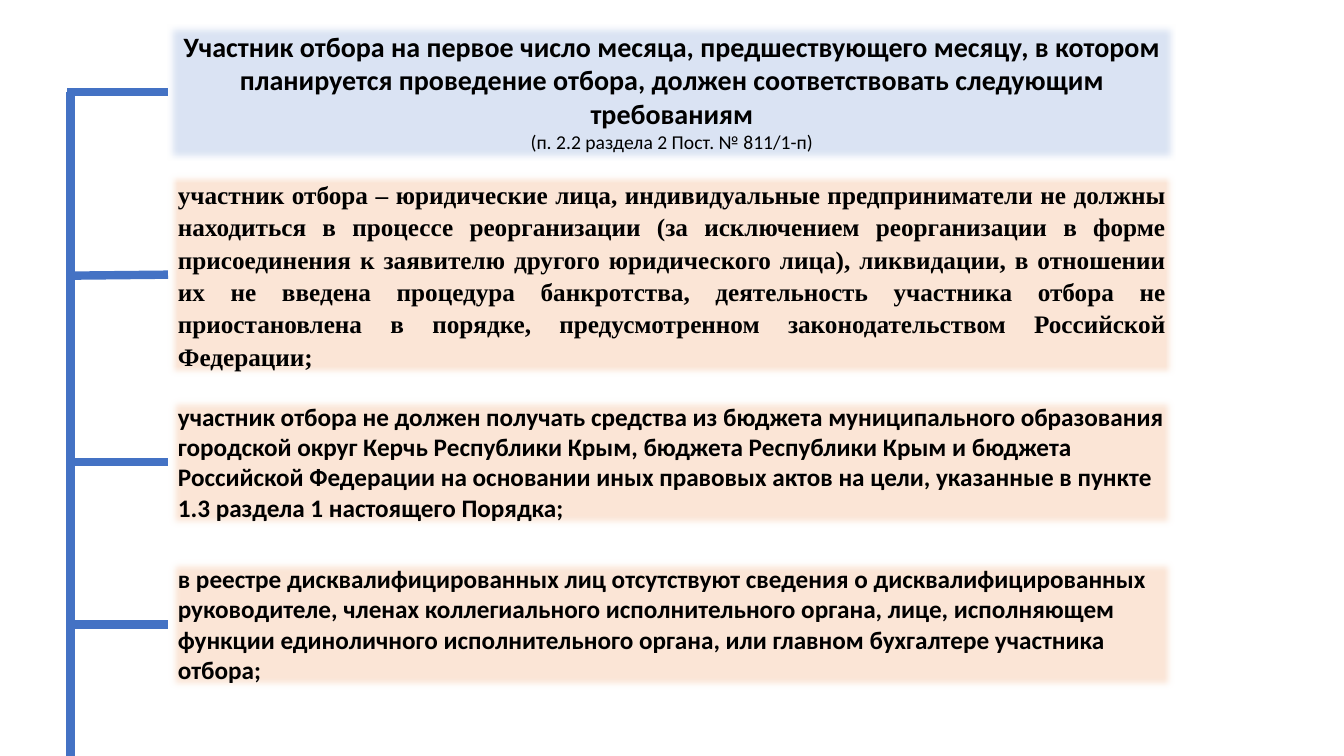
from dataclasses import dataclass
from lxml.etree import SubElement
from pptx import Presentation
from pptx.dml.color import RGBColor as RGB
from pptx.enum.shapes import MSO_CONNECTOR as LINE, MSO_SHAPE as SHAPE
from pptx.enum.text import MSO_ANCHOR as ANCHOR, MSO_AUTO_SIZE as FIT, PP_ALIGN as ALIGN
from pptx.oxml.ns import qn
from pptx.util import Inches, Pt

HEAD = [
    ("Участник отбора на первое число месяца, предшествующего месяцу, в котором "
     "планируется проведение отбора, должен соответствовать следующим требованиям", 20, True),
    ("(п. 2.2 раздела 2 Пост. № 811/1-п)", 14, False),
]
RULES = [
    "участник отбора – юридические лица, индивидуальные предприниматели не должны "
    "находиться в процессе реорганизации (за исключением реорганизации в форме "
    "присоединения к заявителю другого юридического лица), ликвидации, в отношении их "
    "не введена процедура банкротства, деятельность участника отбора не приостановлена "
    "в порядке, предусмотренном законодательством Российской Федерации;",
    "участник отбора не должен получать средства из бюджета муниципального образования "
    "городской округ Керчь Республики Крым, бюджета Республики Крым и бюджета "
    "Российской Федерации на основании иных правовых актов на цели, указанные в пункте "
    "1.3 раздела 1 настоящего Порядка;",
    "в реестре дисквалифицированных лиц отсутствуют сведения о дисквалифицированных "
    "руководителе, членах коллегиального исполнительного органа, лице, исполняющем "
    "функции единоличного исполнительного органа, или главном бухгалтере участника "
    "отбора;",
]


@dataclass(frozen=True)
class Theme:
    head: str = "DAE3F3"
    rule: str = "FBE5D6"
    line: str = "4472C4"
    ink: str = "000000"
    sans: str = "Calibri"
    serif: str = "Times New Roman"
    body: int = 18
    stroke: int = 6
    soft: int = 5


LOOK = Theme()
WIDE, HIGH = 13.33, 7.5
LEFT, SPAN = WIDE / 8, WIDE * 0.75
TRUNK = 0.7
ROWS = [(0.24, 1.35), (1.71, 2.03), (3.93, 1.31), (5.54, 1.31)]  # top, height
TILTS = [0, 0.01, 0, 0]


def write(par, text, size=LOOK.body, font=LOOK.sans, bold=True,
          align=ALIGN.LEFT, gap=1.0, after=0):
    par.alignment, par.line_spacing = align, gap
    par.space_before, par.space_after = Pt(0), Pt(after)
    run = par.add_run()
    run.text = text
    run.font.size, run.font.name, run.font.bold = Pt(size), font, bold
    run.font.color.rgb = RGB.from_string(LOOK.ink)


def dress(box, row, fill):
    """Place a box on its row, with a soft-edged fill and no outline."""
    top, tall = row
    box.left, box.top, box.width, box.height = map(Inches, (LEFT, top, SPAN, tall))
    box.fill.solid()
    box.fill.fore_color.rgb = RGB.from_string(fill)
    box.line.fill.background()
    box.shadow.inherit = False
    glow = box.element.spPr.find(qn("a:effectLst"))
    SubElement(glow, qn("a:softEdge"), rad=str(Pt(LOOK.soft)))
    frame = box.text_frame
    frame.word_wrap, frame.auto_size = True, FIT.SHAPE_TO_FIT_TEXT
    frame.vertical_anchor = ANCHOR.TOP
    return frame


def link(slide, *ends):
    line = slide.shapes.add_connector(LINE.STRAIGHT, *map(Inches, ends))
    line.line.color.rgb = RGB.from_string(LOOK.line)
    line.line.width = Pt(LOOK.stroke)
    SubElement(line.element.spPr, qn("a:effectLst"))


def main():
    deck = Presentation()
    deck.slide_width, deck.slide_height = Inches(WIDE), Inches(HIGH)
    slide = deck.slides.add_slide(deck.slide_layouts[5])

    frame = dress(slide.shapes.title, ROWS[0], LOOK.head)
    for i, (text, size, bold) in enumerate(HEAD):
        par = frame.add_paragraph() if i else frame.paragraphs[0]
        write(par, text, size=size, bold=bold, align=ALIGN.CENTER)

    serif = dict(font=LOOK.serif, align=ALIGN.JUSTIFY, gap=1.07, after=8)
    for text, row, style in zip(RULES, ROWS[1:], (serif, {}, {})):
        box = slide.shapes.add_shape(SHAPE.RECTANGLE, 0, 0, 0, 0)
        write(dress(box, row, LOOK.rule).paragraphs[0], text, **style)

    mids = [top + tall / 2 for top, tall in ROWS]
    link(slide, TRUNK, mids[0], TRUNK, HIGH)
    for i, (mid, tilt) in enumerate(zip(mids, TILTS)):
        start = TRUNK if i else TRUNK - 0.04  # the first branch closes the corner
        link(slide, LEFT, mid, start, mid + tilt)

    deck.save("out.pptx")


if __name__ == "__main__":
    main()
